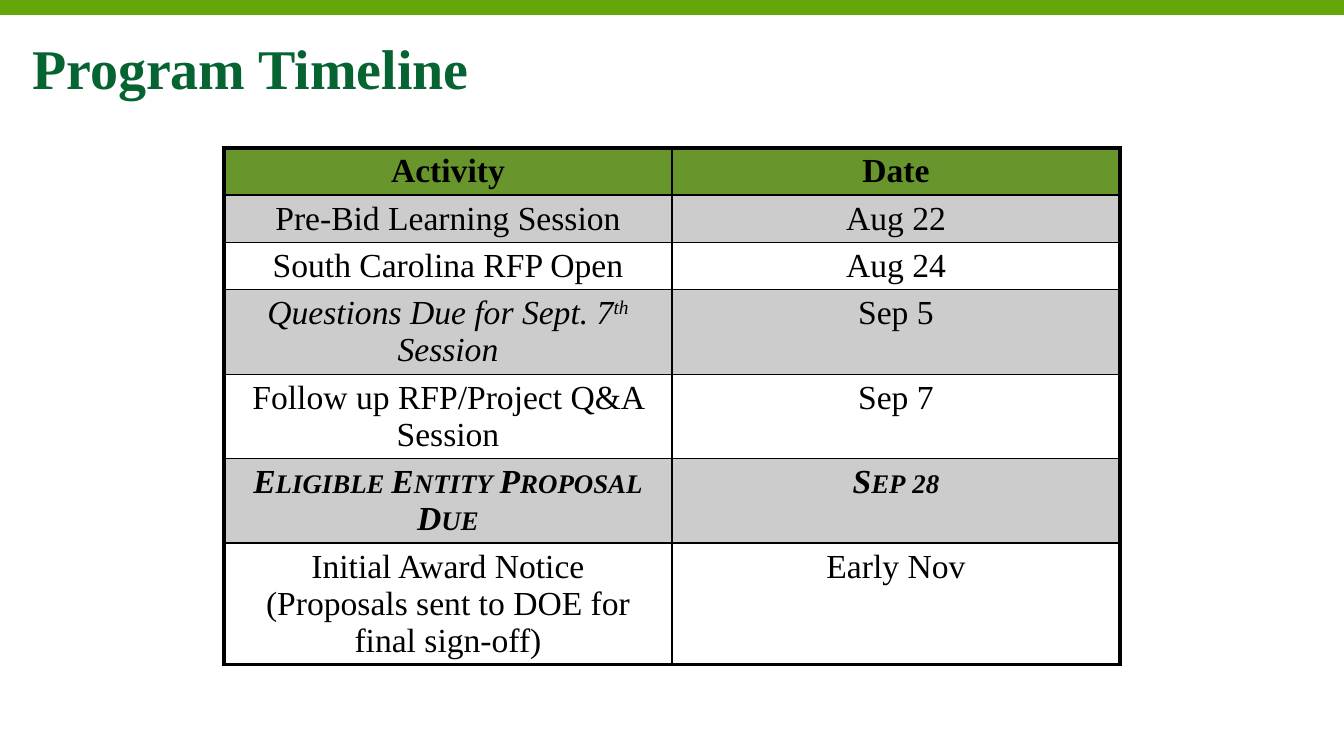
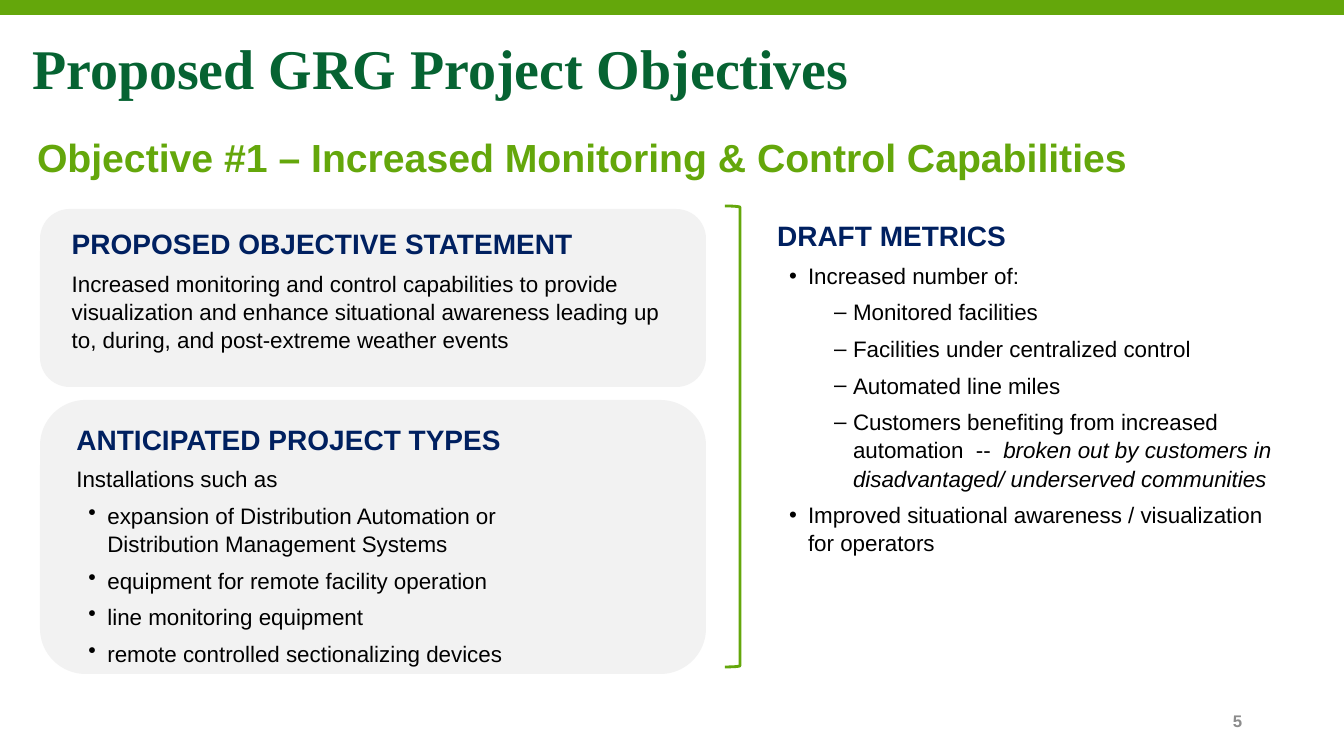
import pptx
import pptx.util
import pptx.dml.color
import pptx.enum.shapes
import pptx.enum.text
import pptx.oxml.ns
from lxml import etree

PX = 9071
GREEN, DARK_GREEN, NAVY, BLACK = "64A70B", "066332", "002060", "000000"
CARD_GREY, NUMBER_GREY = "F2F2F2", "8C8C8C"
HEADER_GREEN, ROW_GREY, WHITE = "68952C", "CCCCCC", "FFFFFF"
SANS, SERIF = "Arial", "Times New Roman"
Pt = pptx.util.Pt
qn = pptx.oxml.ns.qn
SHAPE = pptx.enum.shapes.MSO_SHAPE
ALIGN = pptx.enum.text.PP_ALIGN
ANCHOR = pptx.enum.text.MSO_ANCHOR
NO_FIT = pptx.enum.text.MSO_AUTO_SIZE.NONE


def rgb(color):
    return pptx.dml.color.RGBColor.from_string(color)


def add_run(p, text, font, size, color, bold=False, italic=False):
    r = p.add_run()
    r.text = text
    r.font.name = font
    r.font.size = Pt(size)
    r.font.color.rgb = rgb(color)
    r.font.bold = bold
    r.font.italic = italic
    return r


prs = pptx.Presentation()
prs.slide_width = 1344 * PX
prs.slide_height = 756 * PX

slides = []
for title, layout in [("Program Timeline", 5), ("Proposed GRG Project Objectives", 1)]:
    s = prs.slides.add_slide(prs.slide_layouts[layout])
    band = s.shapes.add_shape(SHAPE.RECTANGLE, 0, 0, 1344 * PX, 15 * PX)
    band.shadow.inherit = False
    band.fill.solid()
    band.fill.fore_color.rgb = rgb(GREEN)
    band.line.fill.background()
    sp = s.shapes.title
    sp.left, sp.top, sp.width, sp.height = 22 * PX, 8 * PX, 1030 * PX, 118 * PX
    tf = sp.text_frame
    tf.auto_size = NO_FIT
    tf.vertical_anchor = ANCHOR.MIDDLE
    p = tf.paragraphs[0]
    p.alignment = ALIGN.LEFT
    add_run(p, title, SERIF, 40, DARK_GREEN, True)
    slides.append(s)

timeline, objectives = slides

plain, italic, due = {}, {"italic": True}, {"bold": True, "italic": True}
activities = [
    (["Activity"], "Date", {"bold": True}, 47),
    (["Pre-Bid Learning Session"], "Aug 22", plain, 47),
    (["South Carolina RFP Open"], "Aug 24", plain, 47),
    (["Questions Due for Sept. 7^th^ Session"], "Sep 5", italic, 84),
    (["Follow up RFP/Project Q&A Session"], "Sep 7", plain, 84),
    (["Eligible Entity Proposal Due"], "Sep 28", due, 84),
    (["Initial Award Notice", "(Proposals sent to DOE for final sign-off)"], "Early Nov", plain, 121),
]
last = len(activities) - 1
table = timeline.shapes.add_table(
    len(activities), 2, 224 * PX, 148 * PX, 896 * PX, sum(a[3] for a in activities) * PX
).table
table.first_row = False
table.horz_banding = False

for row, (activity, date, style, height) in enumerate(activities):
    table.rows[row].height = height * PX
    for col, lines in enumerate([activity, [date]]):
        cell = table.cell(row, col)
        tcPr = cell._tc.get_or_add_tcPr()
        widths = {
            "a:lnL": 3 if col == 0 else 1,
            "a:lnR": 3 if col == 1 else 1,
            "a:lnT": {0: 3, 1: 2}.get(row, 1),
            "a:lnB": {0: 2, last: 3}.get(row, 1),
        }
        for edge, width in widths.items():
            ln = etree.SubElement(tcPr, qn(edge), w=str(Pt(width)))
            fill = etree.SubElement(ln, qn("a:solidFill"))
            etree.SubElement(fill, qn("a:srgbClr"), val=BLACK)
        cell.fill.solid()
        cell.fill.fore_color.rgb = rgb(HEADER_GREEN if row == 0 else ROW_GREY if row % 2 else WHITE)
        tf = cell.text_frame
        for i, line in enumerate(lines):
            p = tf.add_paragraph() if i else tf.paragraphs[0]
            p.alignment = ALIGN.CENTER
            for k, part in enumerate(line.split("^")):
                run_style = plain if style is italic and col == 1 else style
                r = add_run(p, part, SERIF, 24, BLACK, **run_style)
                if k == 1:
                    r.font._element.set("baseline", "30000")
                if style is due:
                    r.font._element.set("cap", "small")

STYLES = {
    "objective": (28, GREEN, True, 0, 13, 0, None),
    "heading": (20, NAVY, True, 0, 13, 0, None),
    "text": (16, BLACK, False, 0, 13, 0, None),
    "bullet": (16, BLACK, False, 0, 44, -19, "•"),
    "dash": (16, BLACK, False, 1, 89, -19, "–"),
}
objective = [("objective", "Objective #1 – Increased Monitoring & Control Capabilities", "")]
statement = [
    ("heading", "PROPOSED OBJECTIVE STATEMENT", ""),
    ("text", "Increased monitoring and control capabilities to provide visualization and enhance "
             "situational awareness leading up to, during, and post-extreme weather events", ""),
]
project_types = [
    ("heading", "ANTICIPATED PROJECT TYPES", ""),
    ("text", "Installations such as", ""),
    ("bullet", "expansion of Distribution Automation or\nDistribution Management Systems", ""),
    ("bullet", "equipment for remote facility operation", ""),
    ("bullet", "line monitoring equipment", ""),
    ("bullet", "remote controlled sectionalizing devices", ""),
]
metrics = [
    ("heading", "DRAFT METRICS", ""),
    ("bullet", "Increased number of:", ""),
    ("dash", "Monitored facilities", ""),
    ("dash", "Facilities under centralized control", ""),
    ("dash", "Automated line miles", ""),
    ("dash", "Customers benefiting from increased automation  --  ",
     "broken out by customers in disadvantaged/ underserved communities"),
    ("bullet", "Improved situational awareness / visualization\nfor operators", ""),
]

s = objectives
sp = s.shapes.add_textbox(14 * PX, 124 * PX, 1262 * PX, 53 * PX)
blocks = [(sp, objective)]
for top, height, content in [(209, 178, statement), (400, 274, project_types)]:
    sp = s.shapes.add_shape(SHAPE.ROUNDED_RECTANGLE, 40 * PX, top * PX, 666 * PX, height * PX)
    sp.shadow.inherit = False
    sp.fill.solid()
    sp.fill.fore_color.rgb = rgb(CARD_GREY)
    sp.line.fill.background()
    blocks.append((sp, content))
sp = s.placeholders[1]
sp.left, sp.top, sp.width, sp.height = 754 * PX, 210 * PX, 548 * PX, 412 * PX
blocks.append((sp, metrics))

for sp, content in blocks:
    tf = sp.text_frame
    tf.word_wrap = True
    tf.auto_size = NO_FIT
    tf.vertical_anchor = ANCHOR.TOP
    tf.margin_left = tf.margin_right = 10 * PX
    tf.margin_top = 7 * PX
    for i, (style, text, emphasis) in enumerate(content):
        size, color, bold, level, indent, hanging, bullet = STYLES[style]
        p = tf.add_paragraph() if i else tf.paragraphs[0]
        p.alignment = ALIGN.LEFT
        p.level = level
        p.line_spacing = 1.05
        p.space_before = Pt(0)
        p.space_after = Pt(6)
        pPr = p._p.get_or_add_pPr()
        pPr.set("marL", str(indent * PX))
        pPr.set("indent", str(hanging * PX))
        if bullet:
            etree.SubElement(pPr, qn("a:buChar"), char=bullet)
        else:
            etree.SubElement(pPr, qn("a:buNone"))
        for k, line in enumerate(text.split("\n")):
            if k:
                p.add_line_break()
            add_run(p, line, SANS, size, color, bold)
        if emphasis:
            add_run(p, emphasis, SANS, size, color, bold, True)

bracket = s.shapes.add_shape(SHAPE.RIGHT_BRACKET, 725 * PX, 206 * PX, 15 * PX, 461 * PX)
bracket.shadow.inherit = False
bracket.fill.background()
bracket.line.color.rgb = rgb(GREEN)
bracket.line.width = Pt(2)

sp = s.shapes.add_textbox(950 * PX, 701 * PX, 302 * PX, 40 * PX)
tf = sp.text_frame
tf.word_wrap = True
tf.vertical_anchor = ANCHOR.MIDDLE
p = tf.paragraphs[0]
p.alignment = ALIGN.RIGHT
add_run(p, "5", SANS, 12, NUMBER_GREY, True)

prs.save("out.pptx")
